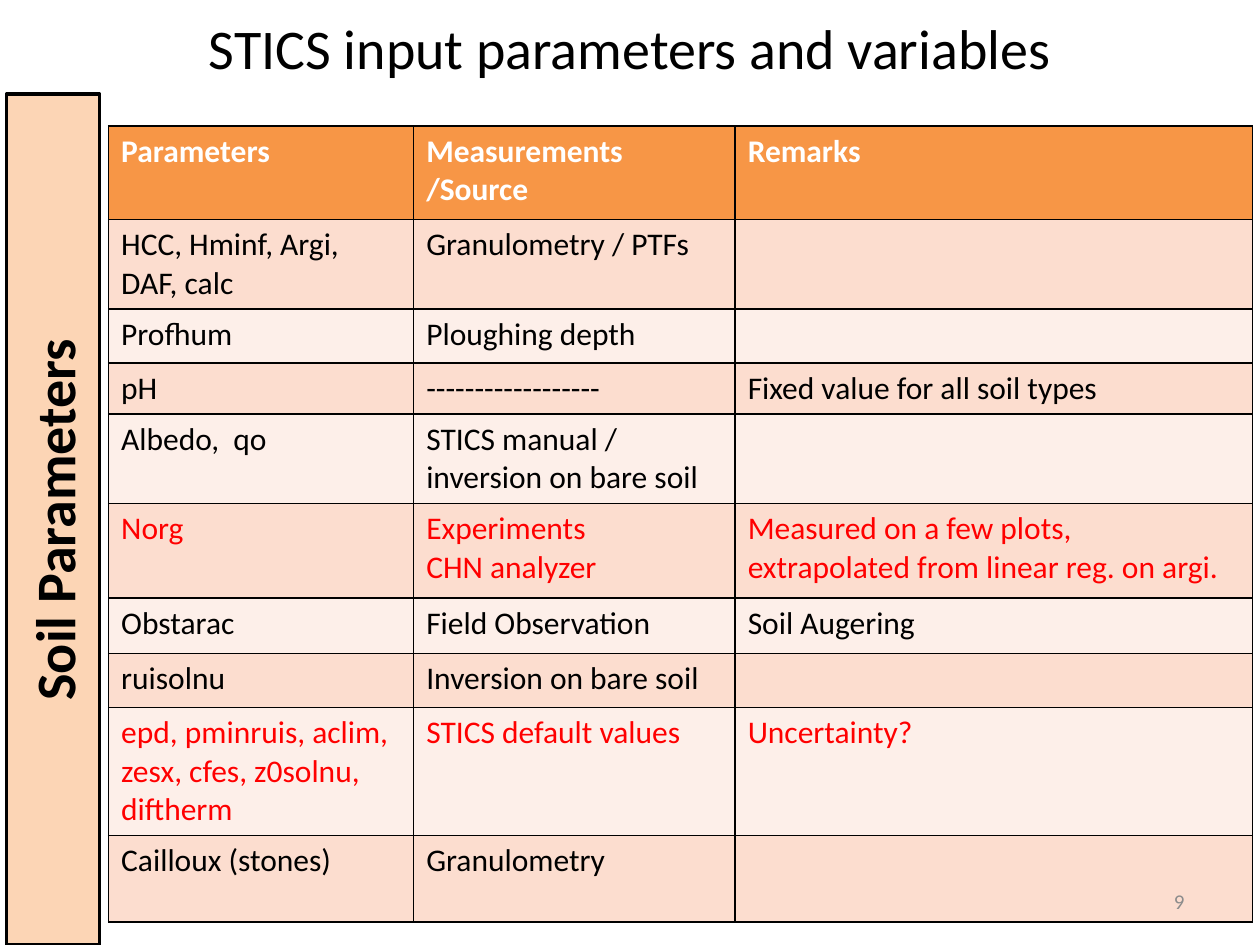
from dataclasses import dataclass

from lxml import etree
from pptx import Presentation
from pptx import util as u
from pptx.dml.color import RGBColor
from pptx.enum import shapes, text
from pptx.oxml import ns


@dataclass(frozen=True)
class Theme:
    font: str = "Calibri"
    black: str = "000000"
    white: str = "FFFFFF"
    red: str = "FF0000"
    grey: str = "8C8C8C"
    header: str = "F79646"
    bands: tuple = ("FCDDCF", "FDEFE9")
    sidebar: str = "FCD5B5"
    title_size: int = 32
    body_size: int = 18
    number_size: int = 12


THEME = Theme()
COLUMN_WIDTHS = (6.15, 6.48, 10.43)
HEADER = ("Parameters", "Measurements\n/Source", "Remarks")
ROWS = (
    (1.8, THEME.black, "HCC, Hminf, Argi, DAF, calc", "Granulometry / PTFs", ""),
    (1.09, THEME.black, "Profhum", "Ploughing depth", ""),
    (1.02, THEME.black, "pH", "-" * 18, "Fixed value for all soil types"),
    (1.8, THEME.black, "Albedo,  qo", "STICS manual / inversion on bare soil", ""),
    (1.9, THEME.red, "Norg", "Experiments\nCHN analyzer",
     "Measured on a few plots, extrapolated from linear reg. on argi."),
    (1.12, THEME.black, "Obstarac", "Field Observation", "Soil Augering"),
    (1.09, THEME.black, "ruisolnu", "Inversion on bare soil", ""),
    (2.57, THEME.red, "epd, pminruis, aclim, zesx, cfes, z0solnu, diftherm",
     "STICS default values", "Uncertainty?"),
    (1.75, THEME.black, "Cailloux (stones)", "Granulometry", ""),
)


def color(value):
    return RGBColor.from_string(value)


def place(shape, box):
    shape.left, shape.top, shape.width, shape.height = (u.Cm(length) for length in box)


def write(frame, wording, size, ink, bold=False, align=None):
    frame.text = wording
    for paragraph in frame.paragraphs:
        paragraph.alignment = align
        font = paragraph.font
        font.name, font.size, font.bold = THEME.font, u.Pt(size), bold
        font.color.rgb = color(ink)


def add_borders(cell):
    properties = cell._tc.get_or_add_tcPr()
    for index, side in enumerate(("lnL", "lnR", "lnT", "lnB")):
        line = etree.Element(ns.qn(f"a:{side}"), w=str(u.Pt(1)))
        fill = etree.SubElement(line, ns.qn("a:solidFill"))
        etree.SubElement(fill, ns.qn("a:srgbClr"), val=THEME.black)
        properties.insert(index, line)


def fill_cell(cell, wording, background, ink, bold):
    cell.fill.solid()
    cell.fill.fore_color.rgb = color(background)
    add_borders(cell)
    write(cell.text_frame, wording, THEME.body_size, ink, bold)


def add_title(slide, box):
    title = slide.shapes.title
    place(title, box)
    title.text_frame.vertical_anchor = text.MSO_ANCHOR.MIDDLE
    write(title.text_frame, "STICS input parameters and variables",
          THEME.title_size, THEME.black, align=text.PP_ALIGN.CENTER)


def add_parameter_table(slide, box):
    records = ((1.88, THEME.white, *HEADER), *ROWS)
    frame = slide.shapes.add_table(len(records), len(HEADER), *(u.Cm(n) for n in box))
    table = frame.table
    for column, width in zip(table.columns, COLUMN_WIDTHS):
        column.width = u.Cm(width)
    for index, (height, ink, *wordings) in enumerate(records):
        table.rows[index].height = u.Cm(height)
        is_header = index == 0
        background = THEME.header if is_header else THEME.bands[(index - 1) % 2]
        for cell, wording in zip(table.rows[index].cells, wordings):
            fill_cell(cell, wording, background, ink, is_header)


def add_sidebar(slide, box):
    sidebar = slide.shapes.add_shape(
        shapes.MSO_SHAPE.RECTANGLE, *(u.Cm(length) for length in box))
    sidebar.shadow.inherit = False
    sidebar.fill.solid()
    sidebar.fill.fore_color.rgb = color(THEME.sidebar)
    sidebar.line.color.rgb = color(THEME.black)
    sidebar.line.width = u.Pt(2)
    frame = sidebar.text_frame
    frame.vertical_anchor = text.MSO_ANCHOR.MIDDLE
    frame._txBody.bodyPr.set("vert", "vert270")
    write(frame, "Soil Parameters", THEME.title_size, THEME.black, True,
          text.PP_ALIGN.CENTER)


def add_slide_number(slide, box):
    frame = slide.shapes.add_textbox(*(u.Cm(length) for length in box)).text_frame
    frame.word_wrap = True
    frame.vertical_anchor = text.MSO_ANCHOR.MIDDLE
    write(frame, "9", THEME.number_size, THEME.grey, align=text.PP_ALIGN.RIGHT)


def main():
    presentation = Presentation()
    presentation.slide_width, presentation.slide_height = u.Cm(25.4), u.Cm(19.05)
    slide = presentation.slides.add_slide(presentation.slide_layouts[5])
    add_parameter_table(slide, (2.19, 2.54, 23.06, 16.02))
    add_sidebar(slide, (0.13, 1.9, 1.88, 17.15))
    add_slide_number(slide, (18.2, 17.66, 5.93, 1.01))
    add_title(slide, (1.27, -0.64, 22.86, 3.18))
    presentation.save("out.pptx")


if __name__ == "__main__":
    main()
